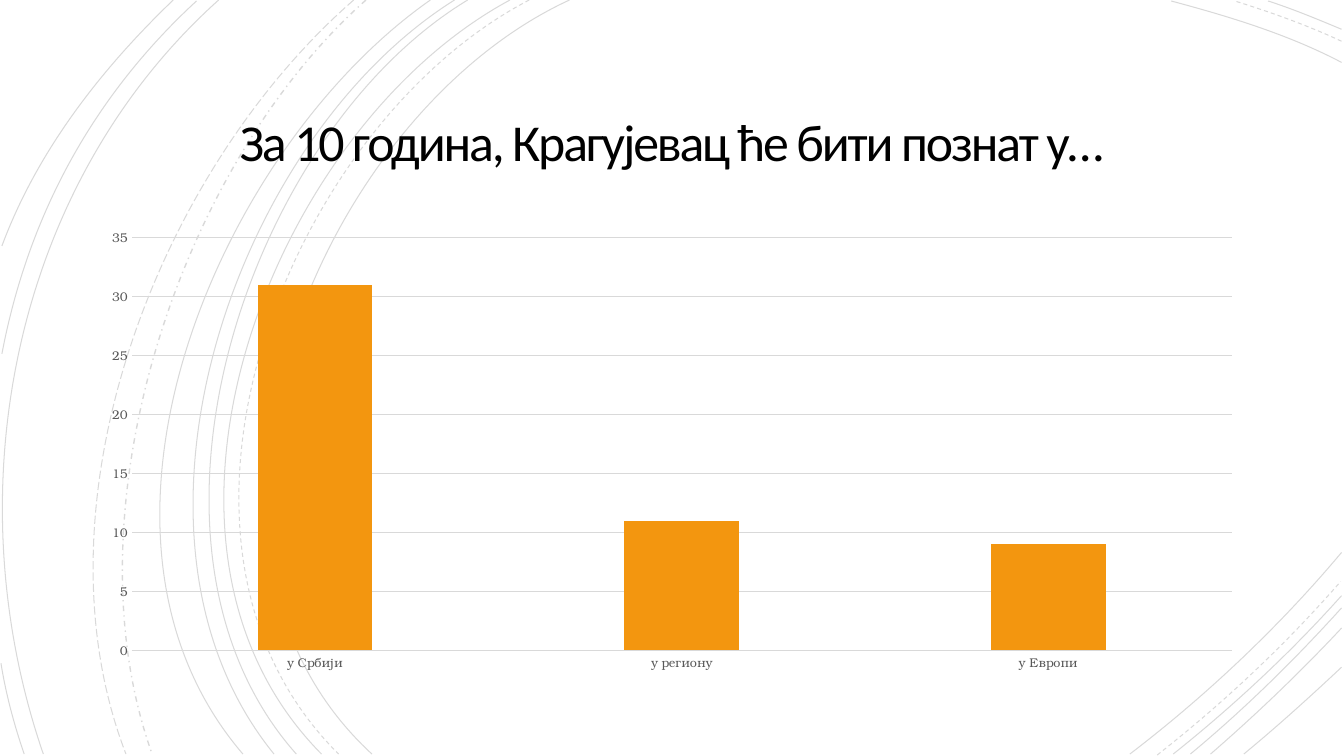
from dataclasses import dataclass

import pptx
import pptx.chart.data
import pptx.dml.color
import pptx.enum.chart
import pptx.enum.dml
import pptx.enum.text
import pptx.oxml
import pptx.oxml.ns
import pptx.util
from pptx.util import Pt

Dash = pptx.enum.dml.MSO_LINE
Point = tuple[float, float]

HUES = {"ink": "000000", "label": "595959", "grid": "D9D9D9", "bar": "F3960F"}
SERIF = "TeX Gyre Bonum"
FOOT = 538.6  # where the arcs leave at the bottom
EDGE = 958.3  # where the arcs leave at the right


@dataclass(frozen=True)
class Arc:
    """A cubic curve: start, two handles, end."""
    start: Point
    bend: Point
    pull: Point
    end: Point
    dash: Dash = Dash.SOLID
    width: float = 0.75


ARCS = [
    # left sweep, from the inside out
    Arc((406.8, 0), (226.8, 82.8), (103, 388.8), (265.7, FOOT)),
    Arc((378, 0), (205.2, 90), (88.6, 386.6), (241.9, FOOT), Dash.DASH),
    Arc((364.3, 0), (194.4, 91.4), (79.2, 386.6), (229.7, FOOT)),
    Arc((334.1, 0), (175.7, 95.8), (79.2, 389.5), (211.7, FOOT)),
    Arc((324.7, 0), (166.3, 99.4), (69.8, 383.8), (195.8, FOOT)),
    Arc((307.4, 0), (156.2, 105.8), (38.2, 380.9), (173.5, FOOT)),
    Arc((261.4, 0), (126.7, 119.5), (46.8, 366.5), (108.7, FOOT), Dash.DASH_DOT, 1),
    Arc((252.7, 0), (113, 121.7), (20.9, 359.3), (90, FOOT), Dash.LONG_DASH),
    Arc((156.2, 0), (7.9, 133.2), (-33.1, 352.8), (31, FOOT)),
    Arc((140.4, 0.7), (66.2, 69.1), (20.2, 154.1), (1.4, 252.7)),
    Arc((0.7, 473.8), (4.3, 496.1), (10.1, 517.7), (17.3, FOOT)),
    Arc((123.8, 0), (72, 49.7), (26.6, 108), (1.4, 175.7)),
    # top right corner
    Arc((EDGE, 44.6), (920.2, 24.5), (877, 11.5), (836.6, 0.7)),
    Arc((EDGE, 29.5), (933.8, 18), (907.2, 8.6), (882, 0.7), Dash.DASH),
    Arc((EDGE, 20.9), (941, 13.7), (923.8, 6.5), (905.8, 0.7)),
    # bottom right corner
    Arc((807.1, FOOT), (861.8, 496.8), (913.7, 447.8), (EDGE, 394.6)),
    Arc((826.6, 539.3), (873.4, 502.6), (918, 460.8), (957.6, 415.4), Dash.DASH),
    Arc((838.1, FOOT), (880.6, 504.7), (921.6, 466.6), (EDGE, 425.5)),
    Arc((850.3, FOOT), (888.5, 506.9), (924.5, 471.6), (EDGE, 434.2)),
    Arc((864.7, FOOT), (897.1, 510.5), (928.8, 480.2), (EDGE, 448.6)),
    Arc((888.5, FOOT), (912.2, 519.1), (935.3, 498.2), (EDGE, 476.6)),
]


def hue(name: str) -> pptx.dml.color.RGBColor:
    return pptx.dml.color.RGBColor.from_string(HUES[name])


def add_arc(shapes, arc: Arc) -> None:
    pen = shapes.build_freeform(Pt(arc.start[0]), Pt(arc.start[1]))
    rest = [(Pt(x), Pt(y)) for x, y in (arc.bend, arc.pull, arc.end)]
    pen.add_line_segments(rest, close=False)
    shape = pen.convert_to_shape()
    shape.shadow.inherit = False
    shape.fill.background()
    shape.line.color.rgb = hue("ink")
    shape.line.width = Pt(arc.width)
    shape.line.dash_style = arc.dash

    # Merge the three straight steps into one cubic curve.
    qn = pptx.oxml.ns.qn
    steps = list(shape.element.iter(qn("a:lnTo")))
    track = steps[0].getparent()
    curve = track.makeelement(qn("a:cubicBezTo"), {})
    for step in steps:
        curve.append(step[0])
        track.remove(step)
    track.append(curve)

    # Let the line show at 15 % strength.
    tint = next(shape.line._get_or_add_ln().iter(qn("a:srgbClr")))
    tint.append(tint.makeelement(qn("a:alpha"), {"val": "15000"}))


def add_title(shapes, text: str) -> None:
    box = shapes.add_textbox(Pt(138.2), Pt(62.6), Pt(683.3), Pt(82.8))
    frame = box.text_frame
    frame.word_wrap = True
    frame.vertical_anchor = pptx.enum.text.MSO_ANCHOR.MIDDLE
    frame.margin_left = frame.margin_right = Pt(18)
    frame.margin_top = frame.margin_bottom = Pt(18)
    para = frame.paragraphs[0]
    para.alignment = pptx.enum.text.PP_ALIGN.CENTER
    para.line_spacing = 0.85
    para.font.name = "Calibri"
    para.font.size = Pt(37)
    para.font.color.rgb = hue("ink")
    run = para.add_run()
    run.text = text
    run.font._element.set("spc", "-150")


def style_axis(axis) -> None:
    axis.major_tick_mark = axis.minor_tick_mark = pptx.enum.chart.XL_TICK_MARK.NONE
    font = axis.tick_labels.font
    font.name = SERIF
    font.size = Pt(9)
    font.color.rgb = hue("label")


def rule(line) -> None:
    """Make a line a thin grey rule."""
    line.color.rgb = hue("grid")
    line.width = Pt(0.75)


def add_bars(shapes) -> None:
    data = pptx.chart.data.CategoryChartData()
    data.categories = ["у Србији", "у региону", "у Европи"]
    data.add_series("Series 1", (31, 11, 9))
    kind = pptx.enum.chart.XL_CHART_TYPE.COLUMN_CLUSTERED
    chart = shapes.add_chart(kind, Pt(63.4), Pt(157), Pt(833), Pt(329), data).chart
    chart.has_legend = chart.has_title = False
    chart.font.name = SERIF
    chart.font.size = Pt(10)
    chart.font.color.rgb = hue("ink")

    plot = chart.plots[0]
    plot.vary_by_categories = False
    plot.gap_width = 219
    plot.overlap = -27
    fill = plot.series[0].format.fill
    fill.solid()
    fill.fore_color.rgb = hue("bar")

    groups, values = chart.category_axis, chart.value_axis
    style_axis(groups)
    style_axis(values)
    rule(groups.format.line)
    rule(values.major_gridlines.format.line)
    values.format.line.fill.background()
    values.minimum_scale, values.maximum_scale, values.major_unit = 0, 35, 5


def main() -> None:
    deck = pptx.Presentation()
    deck.slide_width, deck.slide_height = Pt(960), Pt(540)
    shapes = deck.slides.add_slide(deck.slide_layouts[6]).shapes
    for arc in ARCS:
        add_arc(shapes, arc)
    add_title(shapes, "За 10 година, Крагујевац ће бити познат у…")
    add_bars(shapes)
    deck.save("out.pptx")


if __name__ == "__main__":
    main()
